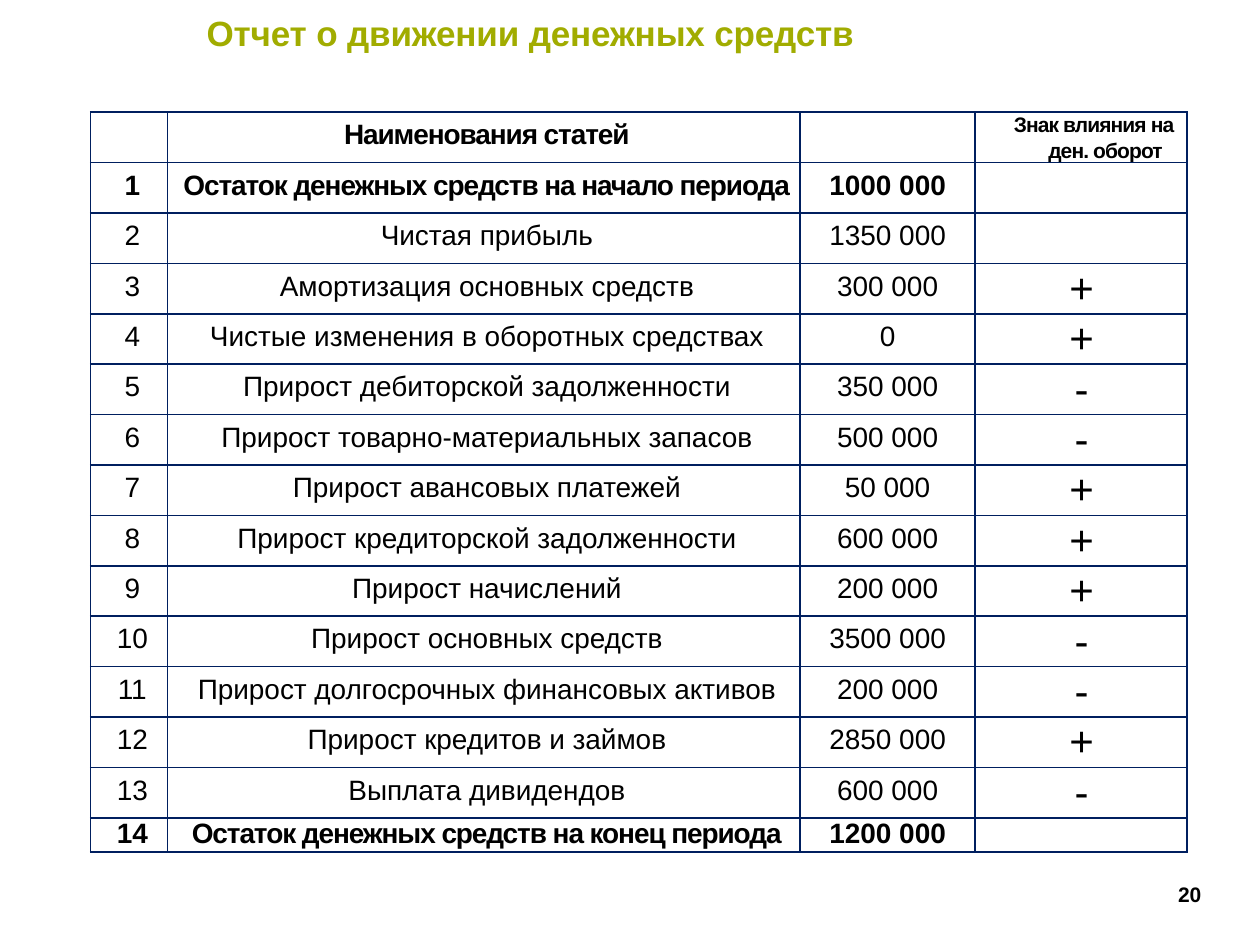
import pptx
import pptx.util
import pptx.dml.color
import pptx.enum.text
import pptx.oxml.ns
from lxml import etree

Inches, Pt = pptx.util.Inches, pptx.util.Pt
ALIGN = pptx.enum.text.PP_ALIGN
qn = pptx.oxml.ns.qn


def paint(code):
    return pptx.dml.color.RGBColor.from_string(code)


def write(frame, text, size=16, bold=False, color="000000", align=ALIGN.CENTER,
          track=0, left=0, first=0, line=None):
    """Fill the first paragraph; track is letter spacing in points."""
    para = frame.paragraphs[0]
    para.alignment = align
    props = para._p.get_or_add_pPr()
    props.set("marL", str(Inches(left)))
    props.set("indent", str(Inches(first)))
    if line:
        para.line_spacing = Pt(line)
    if text:
        run = para.add_run()
        run.text = text
        run.font.name = "Arial"
        run.font.size = Pt(size)
        run.font.bold = bold
        run.font.color.rgb = paint(color)
        run._r.get_or_add_rPr().set("spc", str(round(track * 100)))
    else:
        etree.SubElement(para._p, qn("a:endParaRPr"), sz=str(size * 100))


deck = pptx.Presentation()
deck.slide_width, deck.slide_height = Inches(10), Inches(7.5)
slide = deck.slides.add_slide(deck.slide_layouts[5])

title = slide.shapes.title
title.left, title.top = Inches(1.62), Inches(0.07)
title.width, title.height = Inches(6.76), Inches(0.35)
frame = title.text_frame
frame.auto_size = pptx.enum.text.MSO_AUTO_SIZE.NONE
frame.vertical_anchor = pptx.enum.text.MSO_ANCHOR.TOP
frame.margin_left = frame.margin_top = Inches(0.02)
frame.margin_right = frame.margin_bottom = 0
write(frame, "Отчет о движении денежных средств", size=20, bold=True,
      color="A1AC00", align=ALIGN.LEFT, track=-0.1)

items = [
    ("Остаток денежных средств на начало периода", "1000 000", ""),
    ("Чистая прибыль", "1350 000", ""),
    ("Амортизация основных средств", "300 000", "+"),
    ("Чистые изменения в оборотных средствах", "0", "+"),
    ("Прирост дебиторской задолженности", "350 000", "-"),
    ("Прирост товарно-материальных запасов", "500 000", "-"),
    ("Прирост авансовых платежей", "50 000", "+"),
    ("Прирост кредиторской задолженности", "600 000", "+"),
    ("Прирост начислений", "200 000", "+"),
    ("Прирост основных средств", "3500 000", "-"),
    ("Прирост долгосрочных финансовых активов", "200 000", "-"),
    ("Прирост кредитов и займов", "2850 000", "+"),
    ("Выплата дивидендов", "600 000", "-"),
    ("Остаток денежных средств на конец периода", "1200 000", ""),
]
rows = [("", "Наименования статей", "", "Знак влияния на ден. оборот")]
rows += [(str(num), *item) for num, item in enumerate(items, 1)]
last = len(rows) - 1

table = slide.shapes.add_table(len(rows), 4, Inches(0.72), Inches(0.89),
                               Inches(8.7), Inches(5.87)).table
table.first_row = table.horz_banding = False
for col, width in zip(table.columns, (0.61, 5.02, 1.39, 1.68)):
    col.width = Inches(width)
for r, row in enumerate(rows):
    table.rows[r].height = Inches(0.27 if r == last else 0.4)
    bold = r in (0, 1, last)
    for c, text in enumerate(row):
        cell = table.cell(r, c)
        cell.margin_left = cell.margin_right = cell.margin_bottom = 0
        cell.margin_top = Inches(0 if c == 3 or r == last else 0.06)
        props = cell._tc.get_or_add_tcPr()
        for side in ("lnL", "lnR", "lnT", "lnB"):
            edge = etree.SubElement(props, qn("a:" + side), w=str(Pt(1)))
            fill = etree.SubElement(edge, qn("a:solidFill"))
            etree.SubElement(fill, qn("a:srgbClr"), val="001F5F")
        cell.fill.background()

        look = {"bold": bold, "left": 0.05 if c < 2 else 0}
        if c == 1 and bold:
            look["track"] = -0.6
        if r == last:
            look["line"] = 18.2
        if c == 3 and r == 0:
            look.update(size=12, track=-0.5, left=0.39, first=-0.19, line=14.4)
        elif c == 3 and text:
            look.update(size=24, left=0.01, line=27.8)
        write(cell.text_frame, text, **look)

page = slide.shapes.add_textbox(Inches(9.32), Inches(7), Inches(0.24), Inches(0.2))
frame = page.text_frame
frame.word_wrap = True
frame.margin_left = frame.margin_right = frame.margin_top = frame.margin_bottom = 0
write(frame, "20", size=12, bold=True, align=ALIGN.LEFT, track=-0.1, left=0.03, line=14.2)

deck.save("out.pptx")
